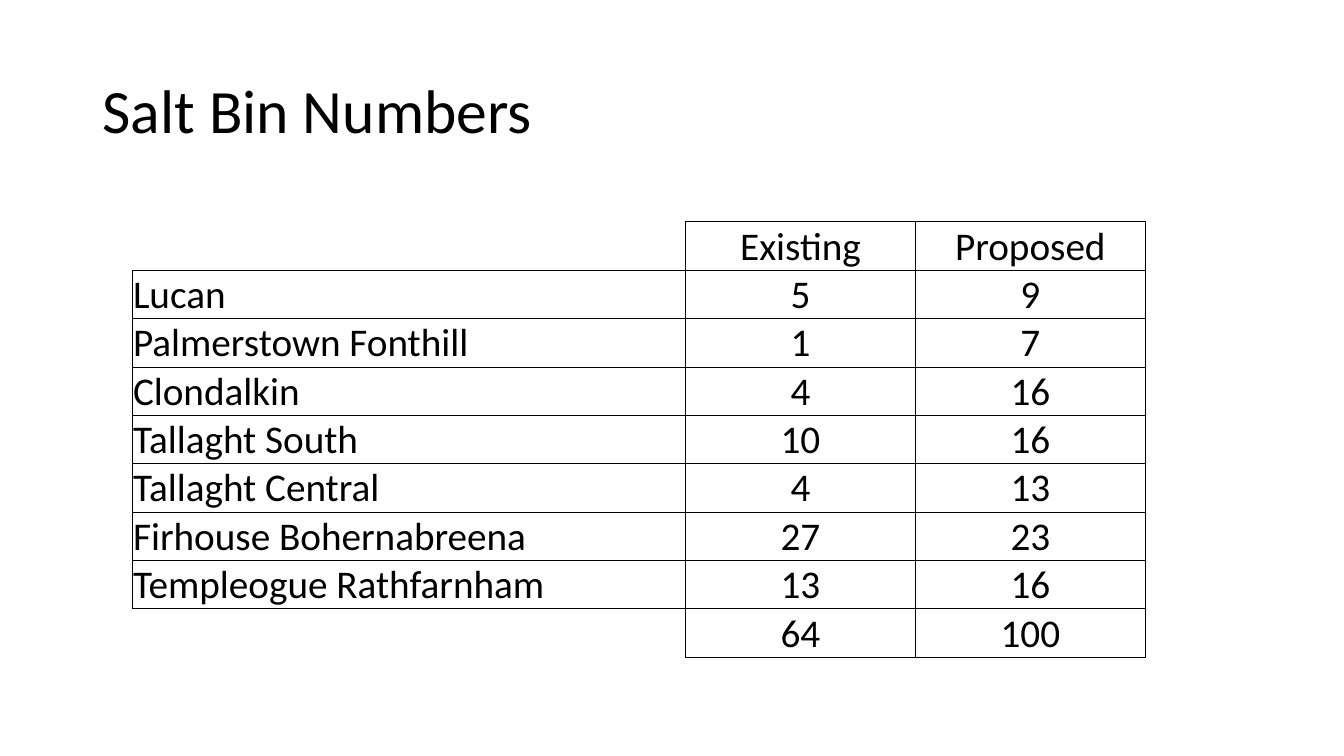
import pptx
import pptx.dml.color
import pptx.enum.text
import pptx.oxml.ns
import pptx.util
from lxml import etree
from pptx.util import Inches

TITLE = "Salt Bin Numbers"
ROWS = [
    ("", "Existing", "Proposed"),
    ("Lucan", "5", "9"),
    ("Palmerstown Fonthill", "1", "7"),
    ("Clondalkin", "4", "16"),
    ("Tallaght South", "10", "16"),
    ("Tallaght Central", "4", "13"),
    ("Firhouse Bohernabreena", "27", "23"),
    ("Templeogue Rathfarnham", "13", "16"),
    ("", "64", "100"),
]
COLUMN_WIDTHS = (5.49, 2.28, 2.28)
ROW_HEIGHT = 0.48
TABLE_LEFT, TABLE_TOP = 1.31, 2.2
THEME = {"font": "Calibri", "ink": "000000", "title": 44, "table": 28, "border": 0.5}
ALIGN = pptx.enum.text.PP_ALIGN
ANCHOR = pptx.enum.text.MSO_ANCHOR


def write(frame, text, size, align):
    para = frame.paragraphs[0]
    para.alignment = align
    span = para.add_run()
    span.text = text
    span.font.name = THEME["font"]
    span.font.size = pptx.util.Pt(size)
    span.font.color.rgb = pptx.dml.color.RGBColor.from_string(THEME["ink"])
    return para


def set_borders(cell, drawn_sides):
    qn = pptx.oxml.ns.qn
    properties = cell._tc.get_or_add_tcPr()
    for side in "LRTB":
        line = etree.SubElement(properties, qn(f"a:ln{side}"))
        if side in drawn_sides:
            line.set("w", str(pptx.util.Pt(THEME["border"])))
            fill = etree.SubElement(line, qn("a:solidFill"))
            etree.SubElement(fill, qn("a:srgbClr"), val=THEME["ink"])
        else:
            etree.SubElement(line, qn("a:noFill"))


def add_title(page):
    box = page.shapes.add_textbox(Inches(0.92), Inches(0.4), Inches(11.5), Inches(1.45))
    frame = box.text_frame
    frame.word_wrap = True
    frame.vertical_anchor = ANCHOR.MIDDLE
    write(frame, TITLE, THEME["title"], ALIGN.LEFT).line_spacing = 0.9


def add_bin_table(page):
    table = page.shapes.add_table(
        len(ROWS), len(COLUMN_WIDTHS), Inches(TABLE_LEFT), Inches(TABLE_TOP),
        Inches(sum(COLUMN_WIDTHS)), Inches(ROW_HEIGHT * len(ROWS))).table
    table.first_row = table.horz_banding = False
    for column, width in zip(table.columns, COLUMN_WIDTHS):
        column.width = Inches(width)
    for row_index, values in enumerate(ROWS):
        table.rows[row_index].height = Inches(ROW_HEIGHT)
        for column_index, text in enumerate(values):
            cell = table.cell(row_index, column_index)
            corner_sides = "RB" if row_index == 0 else "RT"
            set_borders(cell, "LRTB" if text else corner_sides)
            cell.fill.background()
            cell.vertical_anchor = ANCHOR.BOTTOM
            cell.margin_left = cell.margin_right = cell.margin_top = Inches(0.01)
            cell.margin_bottom = 0
            if text:
                align = ALIGN.CENTER if column_index else ALIGN.LEFT
                write(cell.text_frame, text, THEME["table"], align)


def main():
    deck = pptx.Presentation()
    deck.slide_width, deck.slide_height = Inches(13.33), Inches(7.5)
    page = deck.slides.add_slide(deck.slide_layouts[6])
    add_title(page)
    add_bin_table(page)
    deck.save("out.pptx")


if __name__ == "__main__":
    main()
